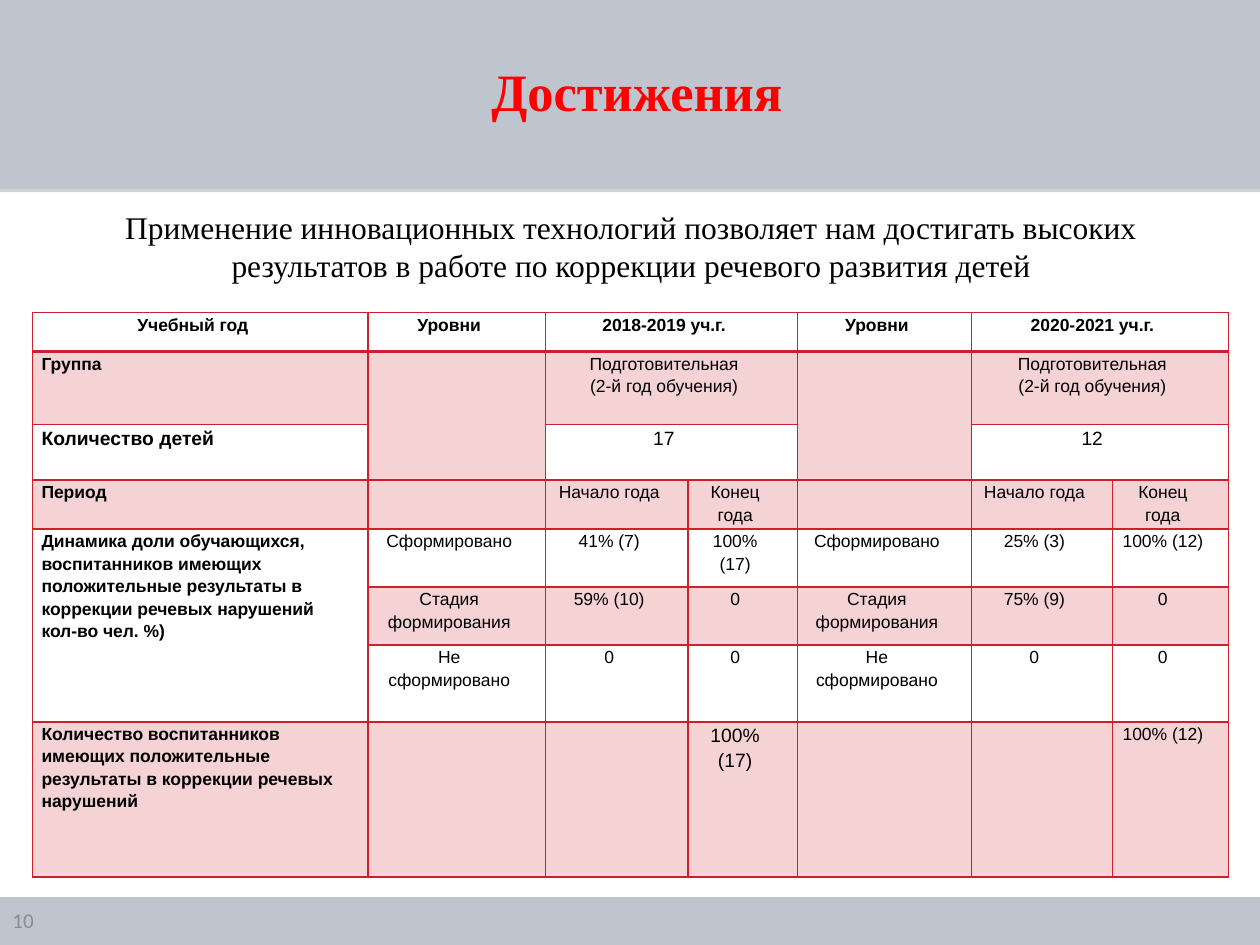
from dataclasses import dataclass

from lxml import etree
from pptx import Presentation
from pptx import util as u
from pptx.dml.color import RGBColor
from pptx.enum import shapes, text
from pptx.oxml.ns import qn

COLS, ROWS = 100, 75  # slide grid
RED, BLACK, BAND = "CD202C", "000000", "BFC5CE"
CENTER, LEFT = text.PP_ALIGN.CENTER, text.PP_ALIGN.LEFT

prs = Presentation()
prs.slide_width, prs.slide_height = u.Inches(10), u.Inches(7.5)


@dataclass
class Area:
    """Place on the slide in grid columns and rows."""
    left: float
    top: float
    width: float
    height: float

    def emu(self) -> list[int]:
        dx, dy = prs.slide_width / COLS, prs.slide_height / ROWS
        return [round(n) for n in (self.left * dx, self.top * dy,
                                   self.width * dx, self.height * dy)]


@dataclass
class Entry:
    """Text of one table cell, with the rows and columns it spans."""
    text: str = ""
    size: float = 10
    rows: int = 1
    cols: int = 1


def rgb(value: str) -> RGBColor:
    return RGBColor.from_string(value)


def sub(parent, tag: str, **attrs):
    return etree.SubElement(parent, qn(tag), {k: str(v) for k, v in attrs.items()})


def place(sp, area: Area) -> None:
    sp.left, sp.top, sp.width, sp.height = area.emu()


def write(tf, words: str, size: float, color: str, font: str,
          bold: bool = False, align=LEFT, spacing: float = 1.0) -> None:
    tf.text = words
    for p in tf.paragraphs:
        p.alignment, p.line_spacing, p.space_before = align, spacing, u.Pt(0)
        for r in p.runs:
            r.font.size, r.font.name, r.font.bold = u.Pt(size), font, bold
            r.font.color.rgb = rgb(color)


def add_band(slide, area: Area) -> None:
    sp = slide.shapes.add_shape(shapes.MSO_SHAPE.RECTANGLE, *area.emu())
    sp.fill.solid()
    sp.fill.fore_color.rgb = rgb(BAND)
    sp.line.fill.background()
    sp.shadow.inherit = False
    effects = sp._element.spPr.find(qn("a:effectLst"))
    shadow = sub(effects, "a:outerShdw", blurRad=0, dist=u.Pt(1.8),
                 dir=90 * 60000, rotWithShape=0)
    sub(sub(shadow, "a:srgbClr", val="808080"), "a:alpha", val=35000)
    slide.shapes._spTree.insert(2, sp._element)  # behind the placeholders


def set_borders(cell, top: float, bottom: float) -> None:
    tc_pr = cell._tc.get_or_add_tcPr()
    widths = {"a:lnL": 1, "a:lnR": 1, "a:lnT": top, "a:lnB": bottom}
    for i, (tag, width) in enumerate(widths.items()):
        ln = sub(tc_pr, tag, w=u.Pt(width))
        sub(sub(ln, "a:solidFill"), "a:srgbClr", val=RED)
        tc_pr.insert(i, ln)


def set_fill(cell, tinted: bool) -> None:
    if not tinted:
        cell.fill.background()
        return
    cell.fill.solid()
    cell.fill.fore_color.rgb = rgb(RED)
    color = next(cell._tc.tcPr.iter(qn("a:srgbClr")))
    sub(color, "a:alpha", val=20000)


def add_results(slide, area: Area, widths, heights, entries, tinted_rows) -> None:
    table = slide.shapes.add_table(len(heights), len(widths), *area.emu()).table
    table.first_row = table.horz_banding = False
    for column, width in zip(table.columns, widths):
        column.width = Area(0, 0, width, 0).emu()[2]
    for row, height in zip(table.rows, heights):
        row.height = Area(0, 0, 0, height).emu()[3]
    for i in range(len(heights)):
        for j in range(len(widths)):
            cell = table.cell(i, j)
            cell.margin_left, cell.margin_right = u.Inches(0.07), u.Inches(0.19)
            cell.margin_top = cell.margin_bottom = 0
            set_fill(cell, i in tinted_rows)
            set_borders(cell, 2 if i == 1 else 1, 2 if i == 0 else 1)
    for (i, j), entry in entries.items():
        cell = table.cell(i, j)
        if entry.rows * entry.cols > 1:
            cell.merge(table.cell(i + entry.rows - 1, j + entry.cols - 1))
        if entry.text:
            write(cell.text_frame, entry.text, entry.size, BLACK, "Arial",
                  bold=i == 0 or j == 0,
                  align=LEFT if j == 0 and i > 0 else CENTER, spacing=1.15)


def result_entries() -> dict[tuple[int, int], Entry]:
    # Row headings
    entries = {
        (0, 0): Entry("Учебный год"),
        (1, 0): Entry("Группа"),
        (2, 0): Entry("Количество детей", 11),
        (3, 0): Entry("Период"),
        (4, 0): Entry("Динамика доли обучающихся, воспитанников имеющих "
                      "положительные результаты в коррекции речевых нарушений "
                      "кол-во чел. %)", rows=3),
        (7, 0): Entry("Количество воспитанников имеющих положительные "
                      "результаты в коррекции речевых нарушений"),
    }
    # One block of three columns per school year
    years = [
        (1, "2018-2019 уч.г.", "17", ["41% (7)", "59% (10)", "0"],
         Entry("100% (17)", 11)),
        (4, "2020-2021 уч.г.", "12", ["25% (3)", "75% (9)", "0"],
         Entry("100% (12)")),
    ]
    levels = ["Сформировано", "Стадия формирования", "Не сформировано"]
    for c, year, children, starts, total in years:
        entries |= {
            (0, c): Entry("Уровни"),
            (0, c + 1): Entry(year, cols=2),
            (1, c): Entry(rows=2),
            (1, c + 1): Entry("Подготовительная\n(2-й год обучения)", cols=2),
            (2, c + 1): Entry(children, 11, cols=2),
            (3, c + 1): Entry("Начало года"),
            (3, c + 2): Entry("Конец года"),
            (7, c + 2): total,
        }
        ends = [total.text, "0", "0"]
        for i, values in enumerate(zip(levels, starts, ends), start=4):
            entries |= {(i, c + k): Entry(v) for k, v in enumerate(values)}
    return entries


def main() -> None:
    slide = prs.slides.add_slide(prs.slide_layouts[1])
    title, body = slide.placeholders

    # Header and footer bands
    add_band(slide, Area(0, 0, COLS, 15))
    add_band(slide, Area(0, 71.2, COLS, 3.8))

    # Title
    place(title, Area(38, 4.2, 25.4, 6.1))
    tf = title.text_frame
    write(tf, "Достижения", 30, "FF0000", "Times New Roman", bold=True)
    tf.word_wrap, tf.vertical_anchor = False, text.MSO_ANCHOR.TOP
    tf.auto_size = text.MSO_AUTO_SIZE.NONE

    # Lead sentence
    place(body, Area(2.6, 16, 95, 7.1))
    tf = body.text_frame
    write(tf, "Применение инновационных технологий позволяет нам достигать "
          "высоких результатов в работе по коррекции речевого развития детей",
          18, BLACK, "Times New Roman", align=CENTER)
    tf.auto_size = text.MSO_AUTO_SIZE.NONE
    p_pr = tf.paragraphs[0]._p.get_or_add_pPr()
    p_pr.set("marL", "0")
    p_pr.set("indent", "0")
    sub(p_pr, "a:buNone")

    # Results table
    add_results(slide, Area(2.6, 24.8, 95, 44.7),
                widths=[26.6, 14.1, 11.3, 8.7, 13.8, 11.2, 9.2],
                heights=[3.1, 5.8, 4.4, 3.9, 4.6, 4.6, 6.1, 12.3],
                entries=result_entries(), tinted_rows={1, 3, 5, 7})
    table = slide.shapes[-1].table
    for i, j in [(2, 0), (2, 2), (2, 5), (4, 0)]:
        table.cell(i, j).fill.background()

    # Slide number
    number = slide.shapes.add_textbox(*Area(0, 71, 7.8, 4).emu())
    number.text_frame.word_wrap = True
    number.text_frame.vertical_anchor = text.MSO_ANCHOR.MIDDLE
    write(number.text_frame, "10", 12, "8C8C8C", "Calibri")

    prs.save("out.pptx")


if __name__ == "__main__":
    main()
